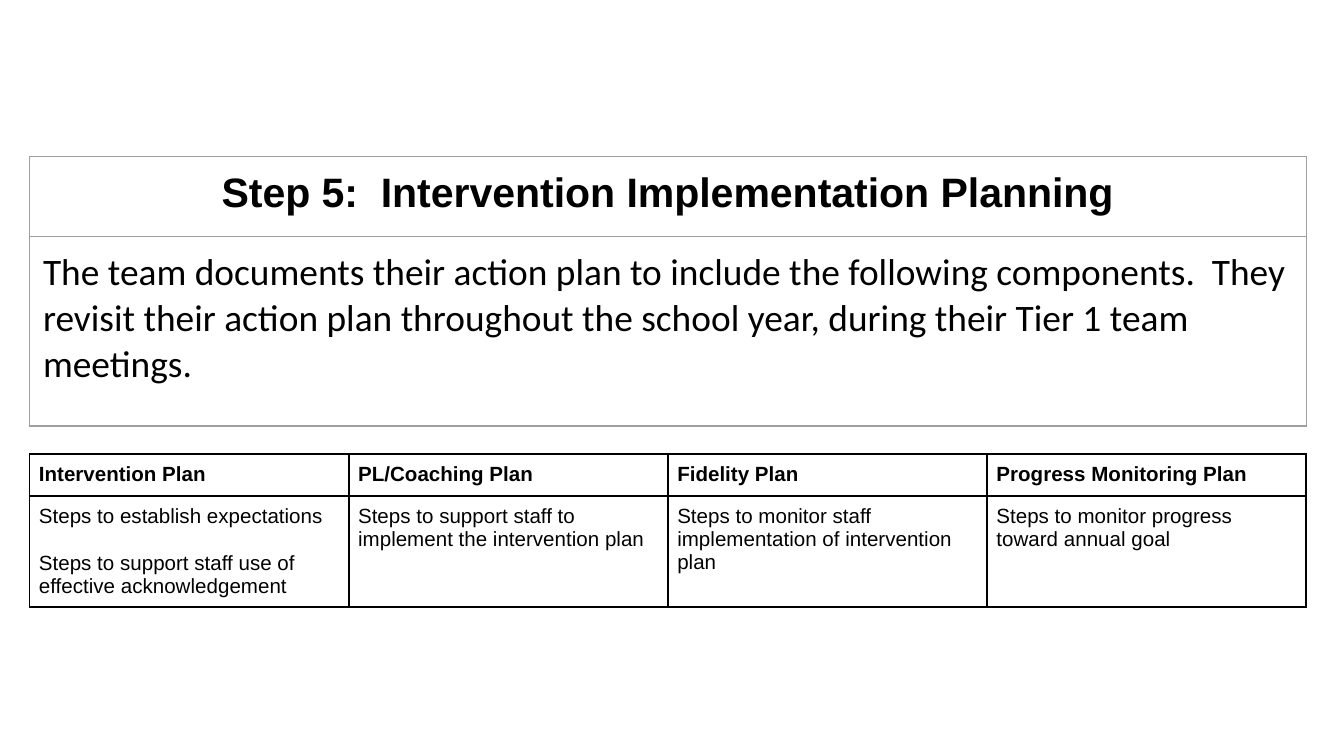
import pptx
import pptx.dml.color
import pptx.enum.text
import pptx.oxml.ns
import pptx.util
from lxml import etree

Pt = pptx.util.Pt
BLACK = pptx.dml.color.RGBColor(0x00, 0x00, 0x00)
WHITE = pptx.dml.color.RGBColor(0xFF, 0xFF, 0xFF)
GREY = pptx.dml.color.RGBColor(0x9E, 0x9E, 0x9E)

LEFT, WIDTH = 15.84, 684


def add_plain_table(slide, top, row_heights, columns):
    """Add a full-width table without banding or header styling."""
    frame = slide.shapes.add_table(len(row_heights), columns, Pt(LEFT), Pt(top),
                                   Pt(WIDTH), Pt(sum(row_heights)))
    table = frame.table
    table.first_row = table.horz_banding = False
    for column in table.columns:
        column.width = Pt(WIDTH / columns)
    for row, height in zip(table.rows, row_heights):
        row.height = Pt(height)
    return table


def fill_cell(cell, paragraphs, font_name, size, bold, inset, border, border_width):
    """Write paragraphs one blank line apart and draw all four borders."""
    cell.margin_left = cell.margin_right = Pt(inset)
    cell.margin_top = cell.margin_bottom = Pt(inset)
    cell.text = "\n".join(paragraphs)
    for index, paragraph in enumerate(cell.text_frame.paragraphs):
        if index:
            paragraph.space_before = Pt(size * 1.15)
        paragraph.font.name = font_name
        paragraph.font.size = Pt(size)
        paragraph.font.bold = bold
        paragraph.font.color.rgb = BLACK
    properties = cell._tc.get_or_add_tcPr()
    for side in ("lnL", "lnR", "lnT", "lnB"):
        line = etree.SubElement(properties, pptx.oxml.ns.qn("a:" + side),
                                w=str(Pt(border_width)))
        solid = etree.SubElement(line, pptx.oxml.ns.qn("a:solidFill"))
        etree.SubElement(solid, pptx.oxml.ns.qn("a:srgbClr"), val=str(border))


presentation = pptx.Presentation()
presentation.slide_width = Pt(720)
presentation.slide_height = Pt(405)
slide = presentation.slides.add_slide(presentation.slide_layouts[6])

# Step heading and description
step_table = add_plain_table(slide, 84, [42.8, 101.5], 1)
step_rows = [
    ("Step 5:  Intervention Implementation Planning", "Arial", 22, True),
    ("The team documents their action plan to include the following components.  "
     "They revisit their action plan throughout the school year, during their "
     "Tier 1 team meetings.", "Calibri", 20, False),
]
for row, (text, font_name, size, bold) in enumerate(step_rows):
    cell = step_table.cell(row, 0)
    fill_cell(cell, [text], font_name, size, bold, 7.2, GREY, 0.75)
    cell.fill.solid()
    cell.fill.fore_color.rgb = WHITE
heading = step_table.cell(0, 0).text_frame.paragraphs[0]
heading.alignment = pptx.enum.text.PP_ALIGN.CENTER

# Plan components
plans = [
    ("Intervention Plan", ["Steps to establish expectations",
                           "Steps to support staff use of effective acknowledgement"]),
    ("PL/Coaching Plan", ["Steps to support staff to implement the intervention plan"]),
    ("Fidelity Plan", ["Steps to monitor staff implementation of intervention plan"]),
    ("Progress Monitoring Plan", ["Steps to monitor progress toward annual goal"]),
]
plan_table = add_plain_table(slide, 243.2, [22.5, 59], len(plans))
for column, (title, steps) in enumerate(plans):
    for row, paragraphs in enumerate(([title], steps)):
        cell = plan_table.cell(row, column)
        fill_cell(cell, paragraphs, "Arial", 11, row == 0, 5.04, BLACK, 1)
        cell.fill.background()

presentation.save("out.pptx")
